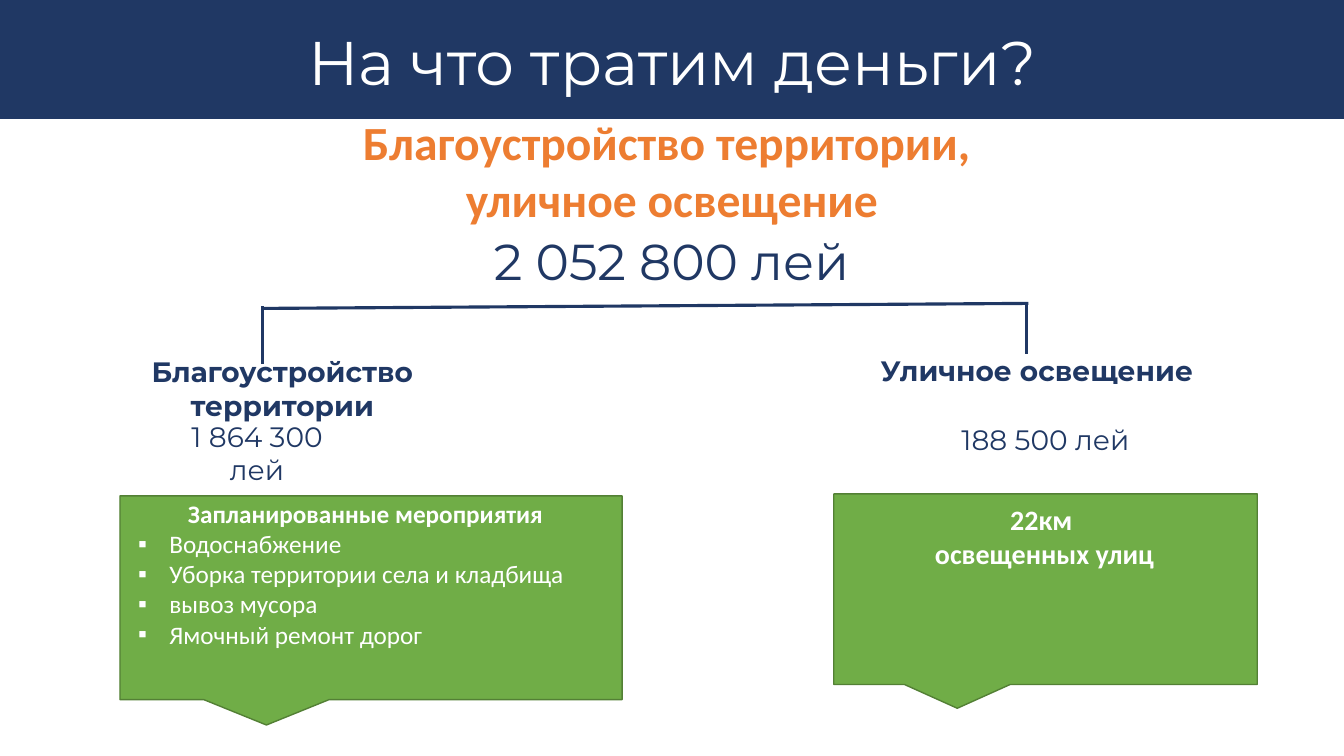
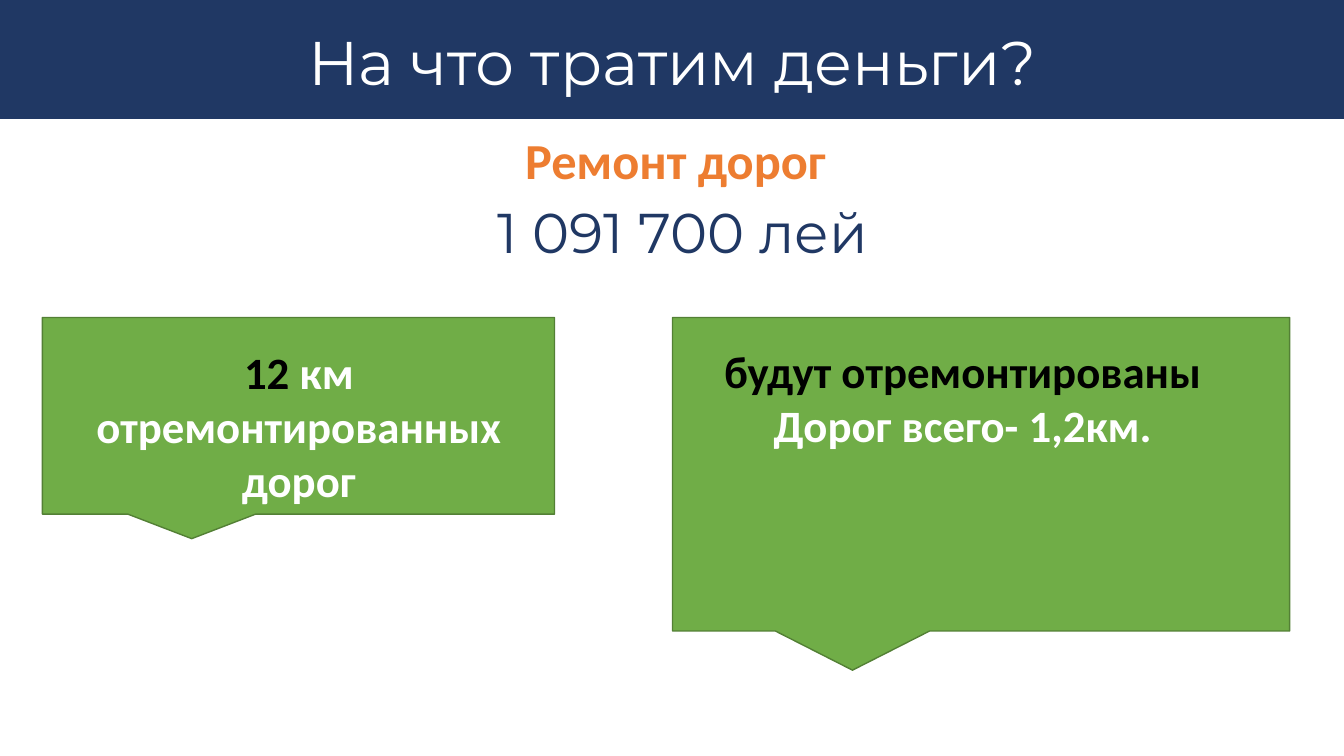
from lxml import etree
from pptx import Presentation
from pptx import util as u
from pptx.dml import color
from pptx.enum import shapes, text
from pptx.oxml import ns

PX = 9144  # EMU in one px, at 100 px to the inch
NAVY, ORANGE, GREEN, DARK_GREEN = "203864", "ED7D31", "70AD47", "538035"
WHITE, BLACK = "FFFFFF", "000000"

AMOUNT = {"name": "Montserrat", "color": NAVY, "bold": False}
LABEL = AMOUNT | {"size": 20, "bold": True}
HEADING = {"name": "Calibri", "color": ORANGE, "bold": True}
NOTE = HEADING | {"color": WHITE}
TITLE = AMOUNT | {"color": WHITE, "size": 44}


def rgb(value):
    return color.RGBColor.from_string(value)


def px(*lengths):
    return [u.Emu(length * PX) for length in lengths]


class Deck:
    """Holds the house style and the slide being built."""

    def __init__(self, width, height):
        self.deck = Presentation()
        self.width = width
        self.deck.slide_width, self.deck.slide_height = px(width, height)

    def add_page(self, title, layout):
        self.page = self.deck.slides.add_slide(self.deck.slide_layouts[layout])
        band = self.shape(shapes.MSO_SHAPE.RECTANGLE, (0, 0, self.width, 118), NAVY)
        box = self.place(self.page.shapes.title, (17, 25, 1300, 81), band)
        self.set_text(box, [title], TITLE)
        box.text_frame.paragraphs[0].line_spacing = 0.9

    def place(self, holder, at, below):
        """Move a placeholder and stack it just above another shape."""
        for side, length in zip(("left", "top", "width", "height"), px(*at)):
            setattr(holder, side, length)
        below.element.addnext(holder.element)
        holder.text_frame.auto_size = text.MSO_AUTO_SIZE.NONE
        return holder

    def shape(self, kind, at, fill, line=None):
        shape = self.page.shapes.add_shape(kind, *px(*at))
        shape.shadow.inherit = False
        shape.fill.solid()
        shape.fill.fore_color.rgb = rgb(fill)
        if line:
            shape.line.color.rgb = rgb(line)
            shape.line.width = u.Pt(1)
        else:
            shape.line.fill.background()
        return shape

    def callout(self, at):
        kind = shapes.MSO_SHAPE.RECTANGULAR_CALLOUT
        return self.shape(kind, at, GREEN, DARK_GREEN)

    def line(self, *ends):
        line = self.page.shapes.add_connector(shapes.MSO_CONNECTOR.STRAIGHT, *px(*ends))
        line.line.color.rgb = rgb(NAVY)
        line.line.width = u.Pt(2.25)
        etree.SubElement(line.element.spPr, ns.qn("a:effectLst"))

    def text(self, at, paragraphs, look, **changes):
        box = self.page.shapes.add_textbox(*px(*at))
        box.text_frame.auto_size = text.MSO_AUTO_SIZE.SHAPE_TO_FIT_TEXT
        self.set_text(box, paragraphs, look | changes)

    def list(self, at, heading, items, below):
        box = self.place(self.page.placeholders[1], at, below)
        look = NOTE | {"size": 18}
        self.set_text(box, [heading] + [[(item, {"bold": False})] for item in items], look)
        first, *rest = box.text_frame.paragraphs
        self.bullet(first, None)
        for para in rest:
            para.alignment = text.PP_ALIGN.LEFT
            self.bullet(para, "▪")

    def bullet(self, para, mark):
        """Set a hanging bullet, or none at all when there is no mark."""
        props = para._p.get_or_add_pPr()
        indent = 31 * PX if mark else 0
        props.set("marL", str(indent))
        props.set("indent", str(-indent))
        if mark:
            etree.SubElement(props, ns.qn("a:buChar"), char=mark)
        else:
            etree.SubElement(props, ns.qn("a:buNone"))

    def set_text(self, box, paragraphs, look):
        """Fill a box; a paragraph is a string or a list of (string, changes)."""
        frame = box.text_frame
        frame.word_wrap = True
        for index, spans in enumerate(paragraphs):
            para = frame.add_paragraph() if index else frame.paragraphs[0]
            para.alignment = text.PP_ALIGN.CENTER
            para.space_before = u.Pt(0)
            for words, changes in [(spans, {})] if isinstance(spans, str) else spans:
                span = para.add_run()
                span.text = words
                values = look | changes
                span.font.color.rgb = rgb(values.pop("color"))
                values["size"] = u.Pt(values["size"])
                for name, value in values.items():
                    setattr(span.font, name, value)


def build_improvement(deck):
    deck.add_page("На что тратим деньги?", layout=1)
    deck.text((316, 223, 700, 71), ["2 052 800 лей"], AMOUNT, size=36)
    for ends in ((260, 304, 260, 361), (1018, 303, 1018, 351), (259, 306, 1020, 301)):
        deck.line(*ends)
    deck.text((860, 346, 337, 77), ["Уличное освещение"], LABEL)
    deck.text((89, 347, 382, 77), ["Благоустройство территории"], LABEL)
    deck.text((68, 411, 374, 77), ["1 864 300", "лей"], LABEL, bold=False)
    deck.text((850, 414, 374, 44), ["188 500 лей"], LABEL, bold=False)
    deck.text((0, 107, deck.width, 125),
              ["Благоустройство территории, ", "уличное освещение"], HEADING, size=34)
    deck.callout((827, 490, 420, 189))
    deck.text((838, 494, 396, 77), ["22км ", "освещенных улиц"], NOTE, size=20)
    plans = deck.callout((119, 492, 498, 202))
    deck.list((127, 489, 471, 193), "Запланированные мероприятия",
              ["Водоснабжение", "Уборка территории села и кладбища",
               "вывоз мусора", "Ямочный ремонт дорог"], plans)


def build_roads(deck):
    deck.add_page("На что тратим деньги?", layout=5)
    deck.text((320, 191, 700, 77), [" 1 091 700 лей"], AMOUNT, size=40)
    deck.text((23, 123, 1294, 71), ["Ремонт дорог"], HEADING, size=36)
    dark = {"color": BLACK}
    deck.callout((42, 315, 508, 195))
    deck.text((55, 337, 483, 172),
              [[("12 ", dark), ("км отремонтированных дорог", {})]], NOTE, size=32)
    deck.callout((667, 315, 612, 311))
    deck.text((667, 336, 576, 172),
              [[("будут отремонтированы", dark)], "Дорог всего- 1,2км."], NOTE, size=32)


def main():
    deck = Deck(1333, 750)
    build_improvement(deck)
    build_roads(deck)
    deck.deck.save("out.pptx")


if __name__ == "__main__":
    main()
